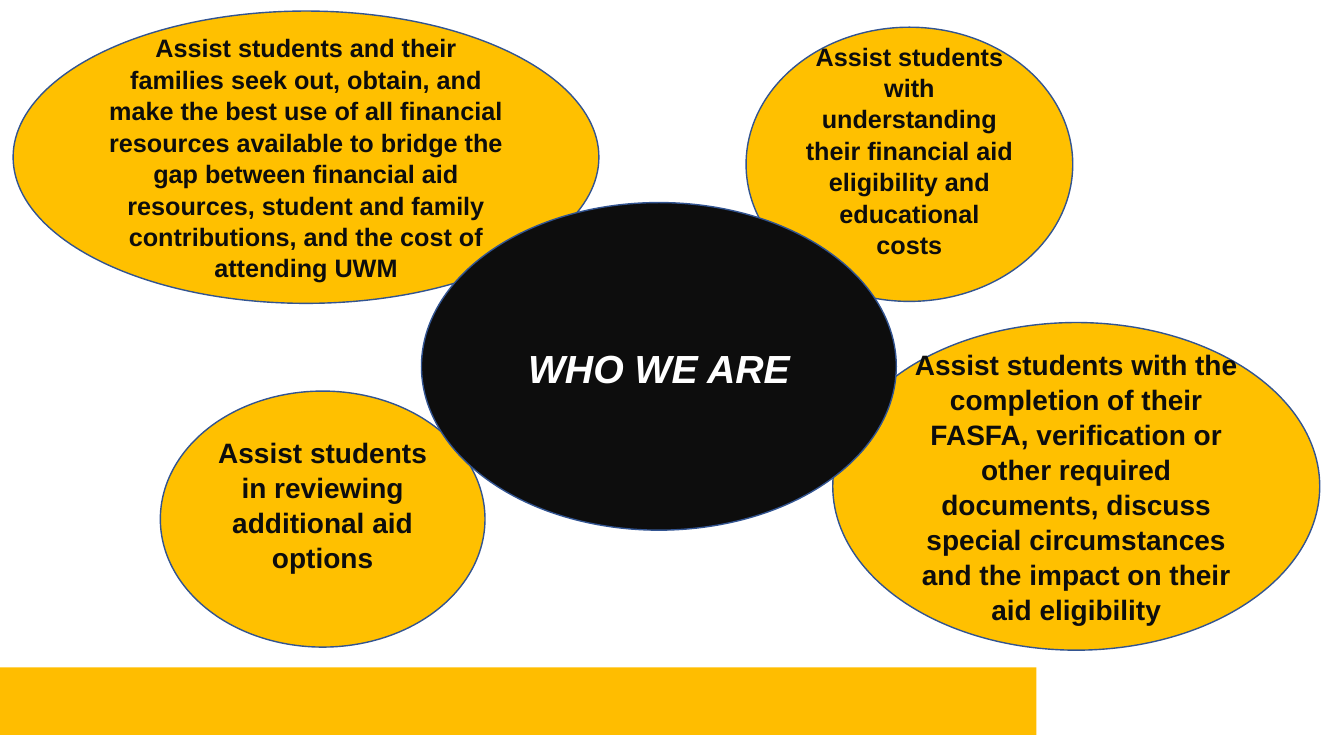
from pptx import Presentation
from pptx.dml.color import RGBColor
from pptx.enum.shapes import MSO_SHAPE as Shape
from pptx.enum.text import MSO_ANCHOR as Anchor, PP_ALIGN as Align
from pptx.util import Inches, Pt

GOLD = RGBColor(0xFF, 0xC0, 0x00)
BAND = RGBColor(0xFF, 0xBD, 0x00)
BLACK = RGBColor(0x0D, 0x0D, 0x0D)
WHITE = RGBColor(0xFF, 0xFF, 0xFF)
BLUE = RGBColor(0x32, 0x54, 0x91)

# Each duty: text, (left, top, width, height), text size, lift of the text
DUTIES = [
    ("Assist students and their families seek out, obtain, and make the best "
     "use of all financial resources available to bridge the gap between "
     "financial aid resources, student and family contributions, and the "
     "cost of attending UWM", (0.13, 0.11, 5.81, 2.9), 18, 0),
    ("Assist students in reviewing additional aid options",
     (1.59, 3.88, 3.22, 2.54), 20, 0.29),
    ("Assist students with the completion of their FASFA, verification or "
     "other required documents, discuss special circumstances and the impact "
     "on their aid eligibility", (8.26, 3.2, 4.83, 3.25), 20, 0),
    ("Assist students with understanding their financial aid eligibility and "
     "educational costs", (7.4, 0.27, 3.24, 2.72), 18, 0.29),
]


def write(frame, text, size=18, color=BLACK, italic=False, lift=0):
    """Centre bold text in a frame; lift is extra room below it, in inches."""
    frame.word_wrap = True
    frame.vertical_anchor = Anchor.MIDDLE
    frame.margin_bottom = Inches(0.05 + lift)
    para = frame.paragraphs[0]
    para.alignment = Align.CENTER
    para.line_spacing = 1.04
    run = para.add_run()
    run.text = text
    font = run.font
    font.name, font.size = "Arial", Pt(size)
    font.bold, font.italic = True, italic
    font.color.rgb = color


class Board:
    def __init__(self, deck):
        self.slide = deck.slides.add_slide(deck.slide_layouts[6])
        self.edge = BLUE

    def shape(self, kind, box, fill):
        item = self.slide.shapes.add_shape(kind, *map(Inches, box))
        item.shadow.inherit = False
        item.fill.solid()
        item.fill.fore_color.rgb = fill
        return item

    def band(self, box):
        self.shape(Shape.RECTANGLE, box, BAND).line.fill.background()

    def oval(self, text, box, fill=GOLD, **style):
        item = self.shape(Shape.OVAL, box, fill)
        item.line.color.rgb = self.edge
        item.line.width = Pt(1)
        write(item.text_frame, text, **style)


def main():
    deck = Presentation()
    deck.slide_width, deck.slide_height = Inches(13.33), Inches(7.5)
    board = Board(deck)
    board.band((0, 6.62, 10.28, 0.67))
    for text, box, size, lift in DUTIES:
        board.oval(text, box, size=size, lift=lift)
    board.oval("WHO WE ARE", (4.18, 2.01, 4.71, 3.25), fill=BLACK,
               size=28, color=WHITE, italic=True)
    deck.save("out.pptx")


if __name__ == "__main__":
    main()
